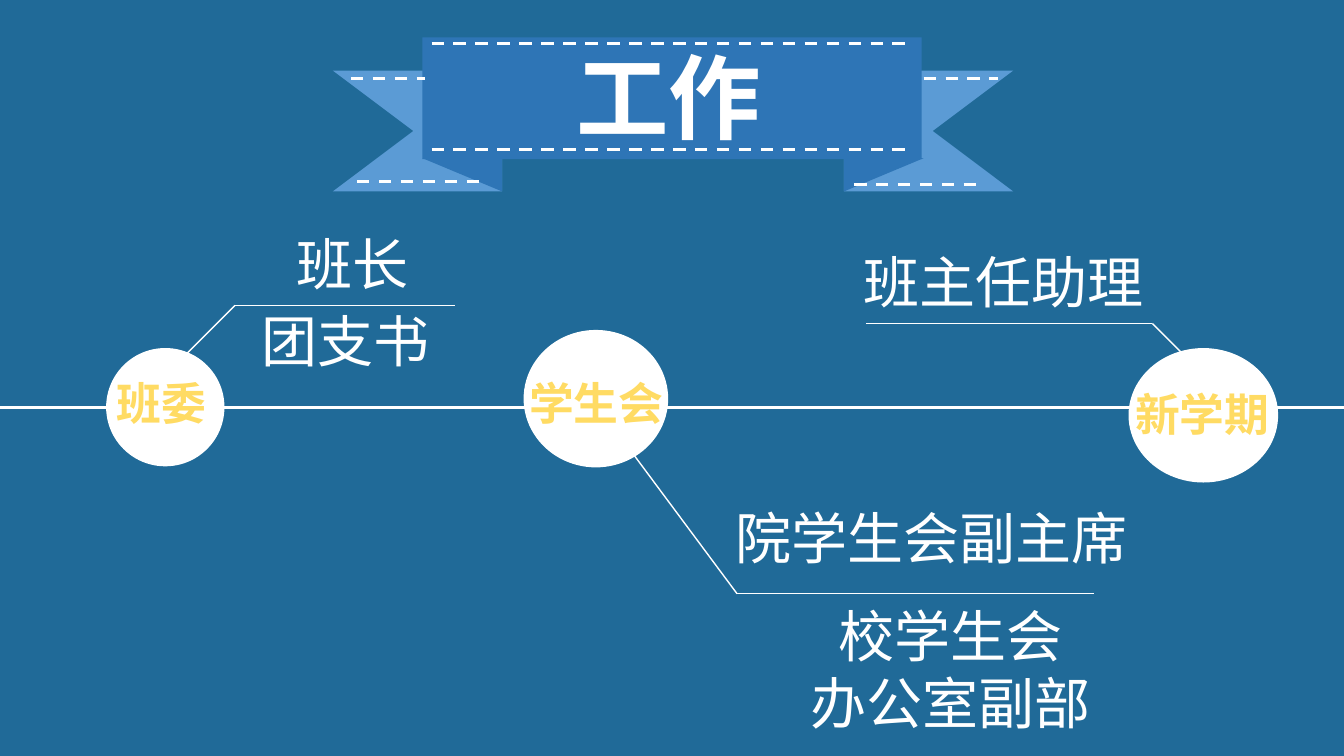
import pptx
import pptx.util
import pptx.dml.color
import pptx.enum.dml
import pptx.enum.shapes
import pptx.enum.text
import pptx.oxml
import pptx.oxml.ns

Inches = pptx.util.Inches
RGBColor = pptx.dml.color.RGBColor
Shape = pptx.enum.shapes.MSO_SHAPE
ALIGN = pptx.enum.text.PP_ALIGN

WHITE = RGBColor(0xFF, 0xFF, 0xFF)
BACKGROUND = RGBColor(0x20, 0x6A, 0x98)
BAND_BLUE = RGBColor(0x2E, 0x75, 0xB6)
TAIL_BLUE = RGBColor(0x5B, 0x9B, 0xD5)
YELLOW = RGBColor(0xFF, 0xDB, 0x63)
FONT = "Noto Sans CJK SC"
WIDTH, HEIGHT = 13.33, 7.5
AXIS_Y = 4.04


def paint(shape, fill, line=None):
    shape.shadow.inherit = False
    shape.fill.solid()
    shape.fill.fore_color.rgb = fill
    if line is None:
        shape.line.fill.background()
    else:
        shape.line.color.rgb = line
        shape.line.width = pptx.util.Pt(1)


def add_preset(shapes, kind, box, fill, line=None):
    shape = shapes.add_shape(kind, *map(Inches, box))
    paint(shape, fill, line)
    return shape


def add_line(shapes, start, end, weight=1, dashed=False):
    connector = shapes.add_connector(
        pptx.enum.shapes.MSO_CONNECTOR.STRAIGHT, *map(Inches, (*start, *end)))
    connector.line.color.rgb = WHITE
    connector.line.width = pptx.util.Pt(weight)
    if dashed:
        connector.line.dash_style = pptx.enum.dml.MSO_LINE.DASH
    properties = connector._element.spPr
    properties.append(properties.makeelement(pptx.oxml.ns.qn("a:effectLst"), {}))


def add_text(shapes, box, lines, size, color=WHITE, bold=False,
             align=ALIGN.LEFT, right_inset=0.1):
    frame = shapes.add_textbox(*map(Inches, box)).text_frame
    frame.word_wrap = True
    frame.margin_right = Inches(right_inset)
    frame.text = "\n".join(lines)
    for paragraph in frame.paragraphs:
        paragraph.alignment = align
        font = paragraph.font
        font.size = pptx.util.Pt(size)
        font.bold = bold
        font.color.rgb = color
        font.name = FONT
        # East Asian glyphs take their typeface from a separate element
        defaults = paragraph._p.pPr.find(pptx.oxml.ns.qn("a:defRPr"))
        defaults.append(defaults.makeelement(
            pptx.oxml.ns.qn("a:ea"), {"typeface": FONT}))


def add_ribbon(slide, left, top, width, title):
    """Title band with a notched, folded tail at each end."""
    shapes = slide.shapes.add_group_shape().shapes
    right = left + width
    tail_width, tail_height, notch = 1.68, 1.2, 0.8
    fold_width, fold_height = 0.79, 0.33
    band_left, band_width, band_height = left + 0.89, 4.95, 1.21
    tail_top = top + 0.33

    for outer, direction in ((left, 1), (right, -1)):
        inner = outer + direction * tail_width
        builder = shapes.build_freeform(
            Inches(inner), Inches(tail_top), scale=1.0)
        builder.add_line_segments([
            (Inches(x), Inches(y)) for x, y in (
                (outer, tail_top),
                (outer + direction * notch, tail_top + tail_height / 2),
                (outer, tail_top + tail_height),
                (inner, tail_top + tail_height))], close=True)
        paint(builder.convert_to_shape(), TAIL_BLUE)

    add_preset(shapes, Shape.RECTANGLE,
               (band_left, top, band_width, band_height), BAND_BLUE)
    for fold_left, mirrored in ((right - tail_width, "0"), (band_left, "1")):
        fold = add_preset(shapes, Shape.RIGHT_TRIANGLE,
                          (fold_left, top + band_height - 0.01,
                           fold_width, fold_height), BAND_BLUE)
        transform = fold._element.spPr.xfrm
        transform.set("flipH", mirrored)
        transform.set("flipV", "1")

    # Stitches: start and length from the left edge, depth below the top
    for start, length, depth in ((0.98, 4.78, 1.11), (0.98, 4.78, 0.06),
                                 (0.18, 0.74, 0.41), (0.24, 1.29, 1.43),
                                 (5.17, 1.28, 1.46), (5.86, 0.74, 0.41)):
        add_line(shapes, (left + start, top + depth),
                 (left + start + length, top + depth), 2.25, True)

    add_text(slide.shapes, (left + 2.32, top - 0.02, 2.11, band_height),
             [title], 66, bold=True)


def add_milestone(slide, box, label, label_box):
    add_preset(slide.shapes, Shape.OVAL, box, WHITE, WHITE)
    add_text(slide.shapes, (*label_box, 0.64), [label], 32, YELLOW, True,
             right_inset=0)


def add_leader(slide, start, elbow, end_x):
    """Slanted line from a milestone, then a level rule for its roles."""
    shapes = slide.shapes.add_group_shape().shapes
    add_line(shapes, start, elbow)
    add_line(shapes, elbow, (end_x, elbow[1]))


def add_timeline(slide):
    add_line(slide.shapes, (0, AXIS_Y), (WIDTH, AXIS_Y), 2.25)
    for box, label, label_box in (
            ((11.2, 3.46, 1.47, 1.32), "新学期", (11.16, 3.79, 1.55)),
            ((5.2, 3.28, 1.42, 1.35), "学生会", (5.15, 3.68, 1.88)),
            ((1.06, 3.46, 1.16, 1.16), "班委", (1.06, 3.68, 1.88))):
        add_milestone(slide, box, label, label_box)
    for start, elbow, end_x in (((1.68, 3.68), (2.33, 3.03), 4.51),
                                ((12.08, 3.86), (11.43, 3.21), 8.59),
                                ((6.24, 4.45), (7.31, 5.89), 10.85)):
        add_leader(slide, start, elbow, end_x)
    for box, lines, align in (
            ((2.84, 2.23, 2.47, 0.77), ["班长"], ALIGN.LEFT),
            ((7.2, 4.95, 4.14, 0.77), ["院学生会副主席"], ALIGN.LEFT),
            ((8.47, 2.41, 3.14, 0.77), ["班主任助理"], ALIGN.LEFT),
            ((2.5, 2.99, 2.47, 0.77), ["团支书"], ALIGN.LEFT),
            ((7.2, 5.92, 4.45, 1.45), ["校学生会", "办公室副部"],
             ALIGN.CENTER)):
        add_text(slide.shapes, box, lines, 40, align=align)


def main():
    presentation = pptx.Presentation()
    presentation.slide_width = Inches(WIDTH)
    presentation.slide_height = Inches(HEIGHT)
    slide = presentation.slides.add_slide(presentation.slide_layouts[6])
    slide.background.fill.solid()
    slide.background.fill.fore_color.rgb = BACKGROUND
    add_timeline(slide)
    add_ribbon(slide, 3.3, 0.37, 6.75, "工作")
    presentation.save("out.pptx")


if __name__ == "__main__":
    main()
